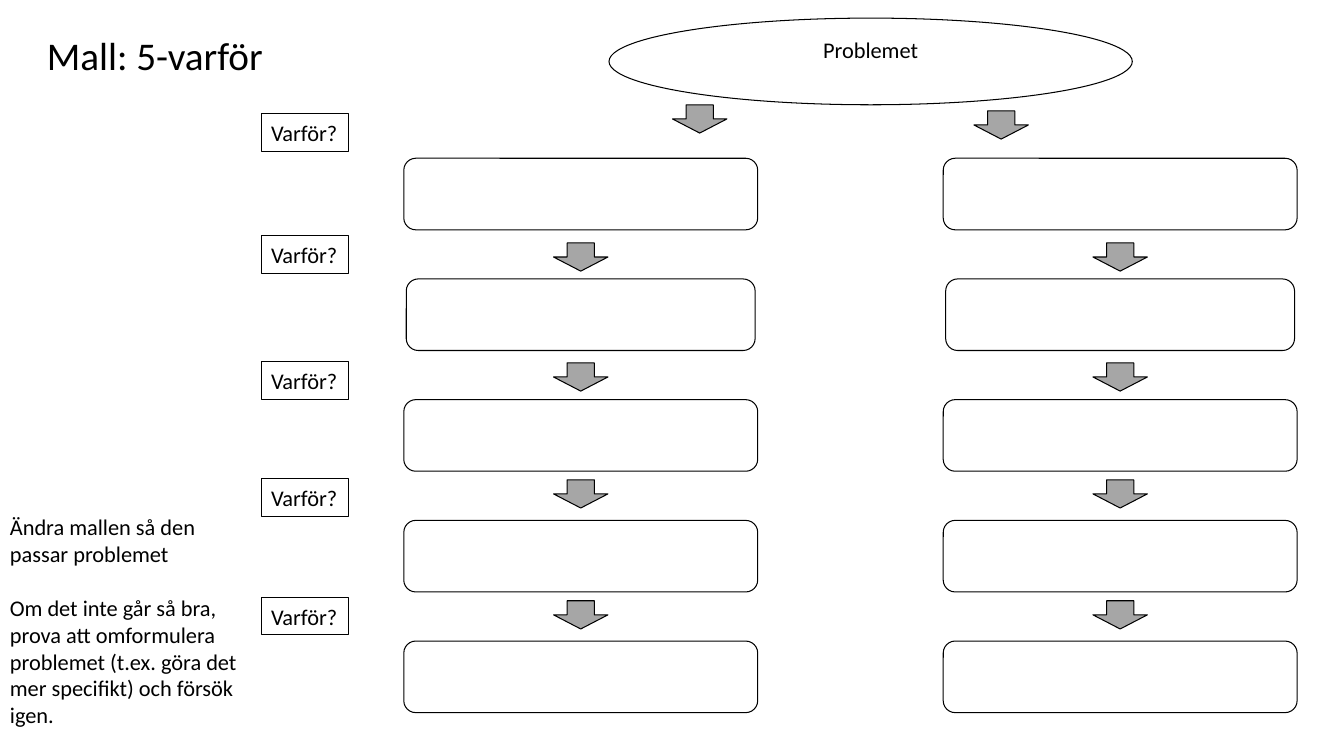
from pptx import Presentation
from pptx.dml.color import RGBColor
from pptx.enum.shapes import MSO_SHAPE
from pptx.enum.text import MSO_ANCHOR, PP_ALIGN
from pptx.util import Inches, Pt

COLORS = {"ink": "000000", "paper": "FFFFFF", "arrow": "A6A6A6"}


class WhySlide:
    font = "Calibri"
    size = 16
    line_width = 0.75

    def __init__(self, slide):
        self.shapes = slide.shapes

    def color(self, name):
        return RGBColor.from_string(COLORS[name])

    def shape(self, kind, left, top, width, height, fill="paper"):
        shape = self.shapes.add_shape(
            kind, Inches(left), Inches(top), Inches(width), Inches(height))
        shape.shadow.inherit = False
        shape.fill.solid()
        shape.fill.fore_color.rgb = self.color(fill)
        shape.line.color.rgb = self.color("ink")
        shape.line.width = Pt(self.line_width)
        return shape

    def fill_text(self, frame, paragraphs, size=size, align=PP_ALIGN.LEFT,
                  wrap=True, gap=0, spacing=1.0):
        frame.word_wrap = wrap
        frame.vertical_anchor = MSO_ANCHOR.TOP
        for i, text in enumerate(paragraphs):
            paragraph = frame.add_paragraph() if i else frame.paragraphs[0]
            paragraph.alignment = align
            paragraph.line_spacing = spacing
            if i:
                paragraph.space_before = Pt(gap)
            run = paragraph.add_run()
            run.text = text
            run.font.name = self.font
            run.font.size = Pt(size)
            run.font.color.rgb = self.color("ink")

    def text(self, left, top, width, height, paragraphs, **style):
        box = self.shapes.add_textbox(
            Inches(left), Inches(top), Inches(width), Inches(height))
        self.fill_text(box.text_frame, paragraphs, **style)

    def problem(self, left, top, width, height, text):
        ellipse = self.shape(MSO_SHAPE.OVAL, left, top, width, height)
        self.fill_text(ellipse.text_frame, [text], align=PP_ALIGN.CENTER)

    def answer(self, center, top, width):
        self.shape(MSO_SHAPE.ROUNDED_RECTANGLE, center - width / 2, top, width, 0.71)

    def arrow(self, center, top):
        self.shape(MSO_SHAPE.DOWN_ARROW, center - 0.27, top, 0.54, 0.28, "arrow")

    def question(self, top):
        label = self.shape(MSO_SHAPE.RECTANGLE, 2.59, top, 0.87, 0.37)
        self.fill_text(label.text_frame, ["Varför?"], wrap=False)


def main():
    prs = Presentation()
    prs.slide_width, prs.slide_height = Inches(13.33), Inches(7.5)
    page = WhySlide(prs.slides.add_slide(prs.slide_layouts[6]))

    # Problem at the top
    page.problem(6.04, 0.18, 5.19, 0.86, "Problemet")

    # Two chains of answers; the first arrow of each starts at the problem
    first_answer, last_answer = 1.57, 6.36
    answer_pitch = (last_answer - first_answer) / 4
    answer_widths = [3.51, 3.46, 3.51, 3.51, 3.51]
    arrow_tops = [2.41, 3.6, 4.76, 5.96]
    for chain_center, start_center, start_top in [(5.76, 6.94, 1.04),
                                                  (11.11, 9.93, 1.1)]:
        for level, width in enumerate(answer_widths):
            page.answer(chain_center, first_answer + level * answer_pitch, width)
        page.arrow(start_center, start_top)
        for arrow_top in arrow_tops:
            page.arrow(chain_center, arrow_top)

    # One question for each level
    for question_top in [1.13, 2.34, 3.59, 4.75, 5.93]:
        page.question(question_top)

    # Title and advice
    page.text(-1.06, 0.31, 5.19, 0.53, ["Mall: 5-varför"], size=28,
              align=PP_ALIGN.CENTER, spacing=0.9)
    page.text(0, 5.04, 2.47, 2.56, [
        "Ändra mallen så den passar problemet",
        "Om det inte går så bra, prova att omformulera problemet "
        "(t.ex. göra det mer specifikt) och försök igen.",
    ], gap=19.5)

    prs.save("out.pptx")


if __name__ == "__main__":
    main()
